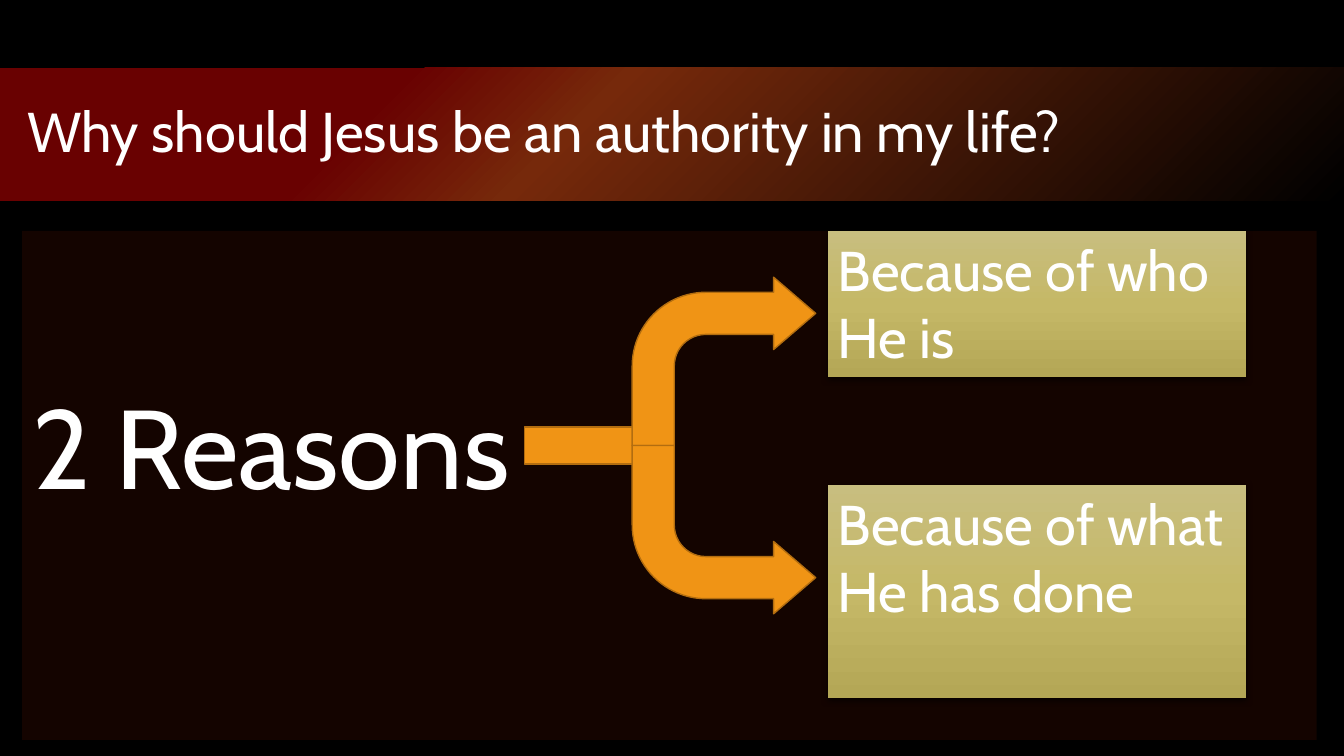
from dataclasses import dataclass
from typing import NamedTuple

from lxml.etree import SubElement
from pptx import Presentation
from pptx.dml.color import RGBColor
from pptx.enum.shapes import MSO_SHAPE
from pptx.enum.text import MSO_ANCHOR, PP_ALIGN
from pptx.oxml import parse_xml
from pptx.oxml.ns import nsdecls, qn
from pptx.util import Inches, Pt


@dataclass(frozen=True)
class Theme:
    font: str = "Cabin"
    text: str = "FFFFFF"
    background: str = "000000"
    panel: str = "A62805"
    panel_opacity: int = 12
    arrow: str = "F09415"
    arrow_edge: str = "B26D10"
    banner: tuple = ((0, "000000"), (57, "76290B"), (72, "690101"))
    card: tuple = ((0, "C8BE7F"), (50, "C5B867"), (100, "B4A756"))
    body_size: int = 40
    headline_size: int = 80


class Box(NamedTuple):
    left: float
    top: float
    width: float
    height: float

    def inside(self, left, top, width, height):
        return Box(self.left + left, self.top + top, width, height)

    def lengths(self):
        return [Inches(length) for length in self]


THEME = Theme()
CIRCLE = '<a:path path="circle"><a:fillToRect l="100000" t="100000"/></a:path>'
DOWNWARD = '<a:lin ang="5400000" scaled="0"/>'


def add_plain_shape(slide, kind, box):
    shape = slide.shapes.add_shape(kind, *box.lengths())
    shape.shadow.inherit = False
    shape.line.fill.background()
    return shape


def fill_solid(shape, color):
    shape.fill.solid()
    shape.fill.fore_color.rgb = RGBColor.from_string(color)


def fill_gradient(shape, stops, direction):
    stop_xml = "".join(
        f'<a:gs pos="{position * 1000}"><a:srgbClr val="{color}"/></a:gs>'
        for position, color in stops
    )
    gradient = parse_xml(
        f'<a:gradFill {nsdecls("a")} rotWithShape="1">'
        f"<a:gsLst>{stop_xml}</a:gsLst>{direction}</a:gradFill>"
    )
    shape.element.spPr.find(qn("a:prstGeom")).addnext(gradient)


def write(shape, words, size, anchor=MSO_ANCHOR.TOP, spacing=1.0, inset_top=0.05):
    frame = shape.text_frame
    frame_format = {
        "word_wrap": True,
        "vertical_anchor": anchor,
        "margin_top": Inches(inset_top),
    }
    for name, value in frame_format.items():
        setattr(frame, name, value)
    paragraph = frame.paragraphs[0]
    paragraph.alignment = PP_ALIGN.LEFT
    paragraph.line_spacing = spacing
    run = paragraph.add_run()
    run.text = words
    for name, value in {"name": THEME.font, "size": Pt(size)}.items():
        setattr(run.font, name, value)
    run.font.color.rgb = RGBColor.from_string(THEME.text)


def add_banner(slide, box, question):
    band = add_plain_shape(slide, MSO_SHAPE.RECTANGLE, box)
    fill_gradient(band, THEME.banner, CIRCLE)
    title_box = box.inside(0.17, 0.07, 12.84, 1.18)
    title = slide.shapes.add_textbox(*title_box.lengths())
    write(title, question, THEME.body_size, MSO_ANCHOR.MIDDLE, 0.9)


def add_panel(slide, box, headline):
    panel = add_plain_shape(slide, MSO_SHAPE.RECTANGLE, box)
    fill_solid(panel, THEME.panel)
    color = panel.element.spPr.find(qn("a:solidFill"))[0]
    SubElement(color, qn("a:alpha"), val=str(THEME.panel_opacity * 1000))
    write(panel, headline, THEME.headline_size, spacing=0.9, inset_top=1.61)


def add_reason(slide, box, reason):
    card = add_plain_shape(slide, MSO_SHAPE.RECTANGLE, box)
    fill_gradient(card, THEME.card, DOWNWARD)
    shadow = parse_xml(
        f'<a:outerShdw {nsdecls("a")} blurRad="57150" dist="19050" dir="5400000" '
        'algn="ctr" rotWithShape="0"><a:srgbClr val="000000">'
        '<a:alpha val="63000"/></a:srgbClr></a:outerShdw>'
    )
    card.element.spPr.find(qn("a:effectLst")).append(shadow)
    write(card, reason, THEME.body_size)


def add_fork_part(slide, kind, box):
    part = add_plain_shape(slide, kind, box)
    fill_solid(part, THEME.arrow)
    part.line.color.rgb = RGBColor.from_string(THEME.arrow_edge)
    part.line.width = Pt(1)
    return part


def add_fork(slide, box):
    branch_left, branch_height, stem_height = 1.07, box.height / 2, 0.37
    stem_top = branch_height - stem_height / 2
    add_fork_part(slide, MSO_SHAPE.RECTANGLE, box.inside(0, stem_top, 1.46, stem_height))
    for row in range(2):
        branch_box = box.inside(
            branch_left, row * branch_height, box.width - branch_left, branch_height
        )
        branch = add_fork_part(slide, MSO_SHAPE.BENT_ARROW, branch_box)
        for index, ratio in enumerate((0.25, 0.215, 0.25, 0.438)):
            branch.adjustments[index] = ratio
        if row == 1:
            branch.element.spPr.find(qn("a:xfrm")).set("flipV", "1")


def main():
    presentation = Presentation()
    presentation.slide_width = Inches(13.33)
    presentation.slide_height = Inches(7.5)
    slide = presentation.slides.add_slide(presentation.slide_layouts[6])
    slide.background.fill.solid()
    slide.background.fill.fore_color.rgb = RGBColor.from_string(THEME.background)

    add_banner(
        slide, Box(0, 0.67, 13.33, 1.32), "Why should Jesus be an authority in my life?"
    )
    panel_box = Box(0.22, 2.29, 12.84, 5.05)
    add_panel(slide, panel_box, "2 Reasons")
    reasons = (
        ("Because of who He is", 0, 1.45),
        ("Because of what He has done", 2.52, 2.12),
    )
    for reason, top, height in reasons:
        add_reason(slide, panel_box.inside(7.99, top, 4.15, height), reason)
    add_fork(slide, panel_box.inside(4.98, 0.46, 2.89, 3.34))
    presentation.save("out.pptx")


if __name__ == "__main__":
    main()
